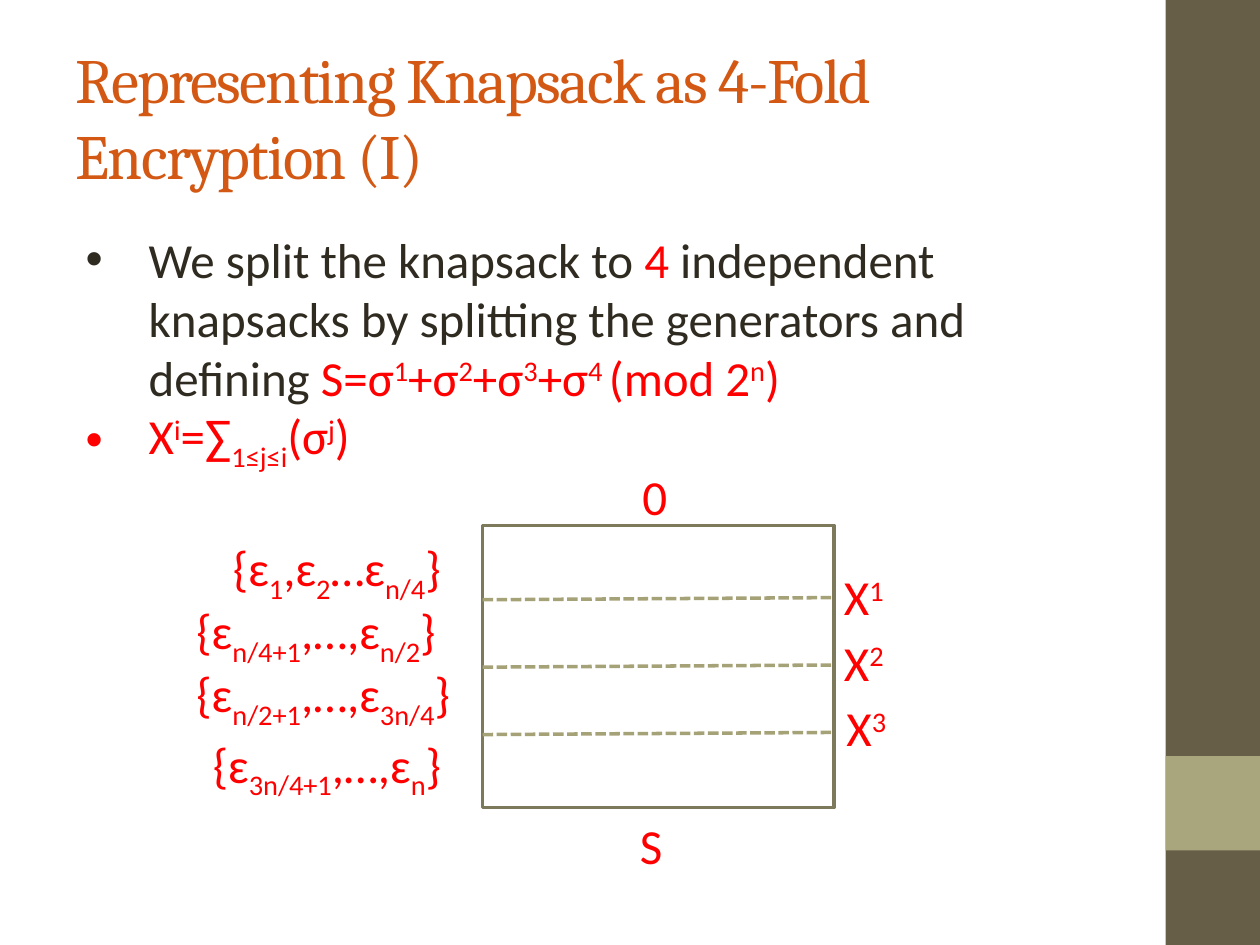
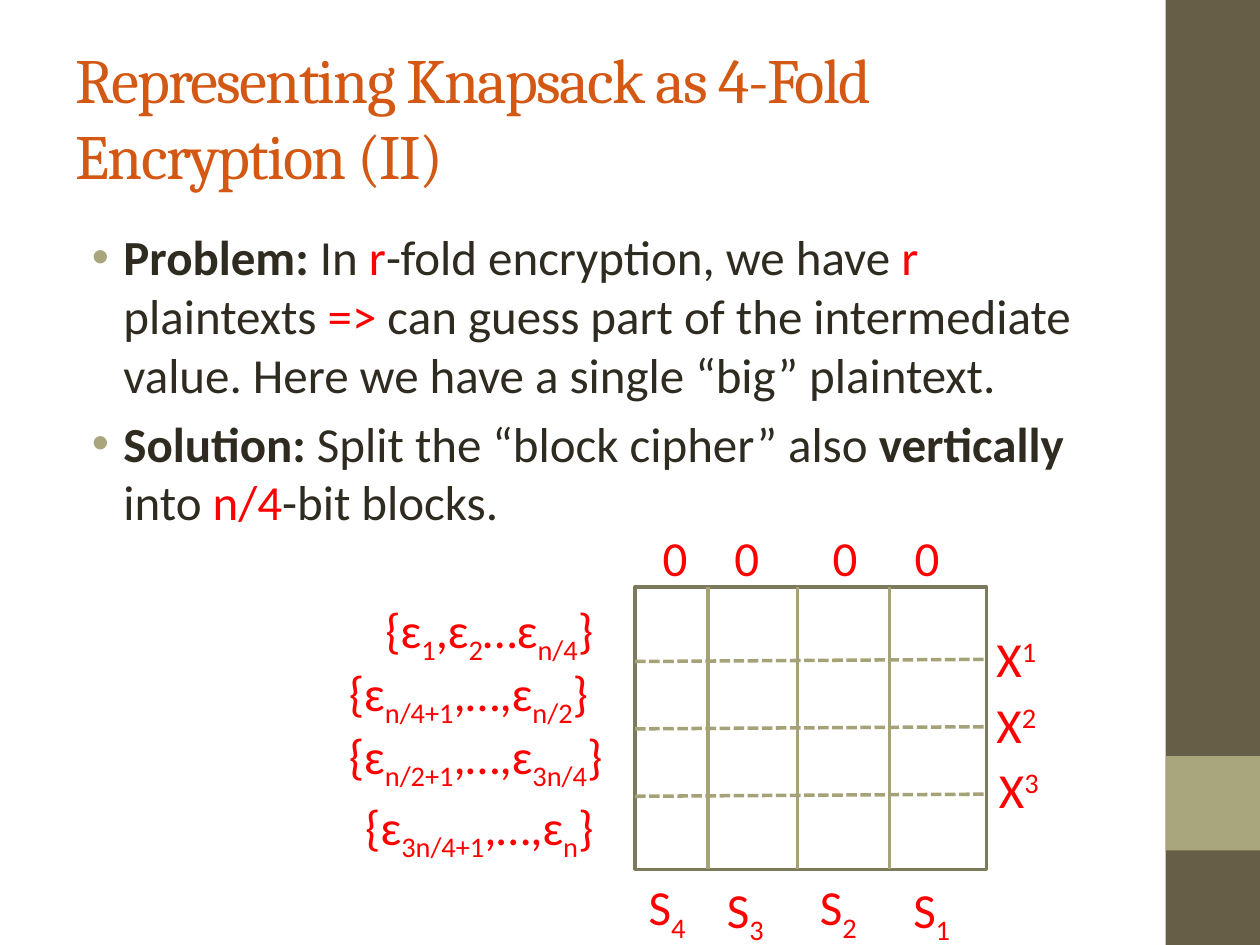
from lxml.etree import SubElement
from pptx import Presentation
from pptx.dml.color import RGBColor
from pptx.enum.dml import MSO_LINE
from pptx.enum.shapes import MSO_CONNECTOR, MSO_SHAPE
from pptx.enum.text import MSO_ANCHOR, MSO_AUTO_SIZE, PP_ALIGN
from pptx.oxml.ns import qn
from pptx.util import Inches, Pt

RED, INK, RUST = "FF0000", "2F2B20", "D25814"
DARK, SAGE, EDGE, RULE = "675E47", "A9A57C", "7D7A5C", "A6A278"
WIDE, HIGH = 100, 75
TALL = 5.7
SHIFTS = {"^": "30000", "_": "-25000"}

LEFT = [
    (-20.8, 0.5, 20.8, "{ɛ|_1|,ɛ|_2|…ɛ|_n/4|}"),
    (-23.7, 5.5, 25.1, "{ɛ|_n/4+1|,…,ɛ|_n/2|}"),
    (-23.7, 10.5, 25.1, "{ɛ|_n/2+1|,…,ɛ|_3n/4|}"),
    (-22.4, 16.1, 23.9, "{ɛ|_3n/4+1|,…,ɛ|_n|}"),
]
RIGHT = [(27.7, 2.8, 5.6, "X|^1"), (27.7, 8, 5.6, "X|^2"), (27.9, 13.2, 5.6, "X|^3")]
WHOLE = [(11.7, -5.2, 4.5, "0"), (11.5, 22.5, 4.5, "S")]
SPLIT = [(x, -5.2, 4.5, "0") for x in (1.2, 6.9, 14.7, 21.2)] + [
    (0.1, 22.5, 6.6, "S|_4"),
    (6.3, 22.7, 6.6, "S|_3"),
    (13.7, 22.5, 6.6, "S|_2"),
    (21.1, 22.7, 6.6, "S|_1"),
]


def hue(code):
    return RGBColor.from_string(code)


def grid(*cells):
    return [Inches(cell / 10) for cell in cells]


def write(para, text, size=28, font="Calibri", color=INK, track=None):
    for part in text.split("|"):
        mark = part[0] if part[0] in "!*^_" else ""
        run = para.add_run()
        run.text = part[len(mark):]
        run.font.size = Pt(size)
        run.font.name = font
        run.font.bold = mark == "*"
        run.font.color.rgb = hue(RED if mark and mark in "!^_" else color)
        props = run.font._element
        if mark in SHIFTS:
            props.set("baseline", SHIFTS[mark])
        if track:
            props.set("spc", str(track * 100))


def place(shape, box):
    shape.left, shape.top, shape.width, shape.height = grid(*box)


def band(slide, box, color):
    shape = slide.shapes.add_shape(MSO_SHAPE.RECTANGLE, *grid(*box))
    shape.shadow.inherit = False
    shape.fill.solid()
    shape.fill.fore_color.rgb = hue(color)
    shape.line.fill.background()


def head(slide, box, text):
    title = slide.shapes.title
    place(title, box)
    frame = title.text_frame
    frame.auto_size = MSO_AUTO_SIZE.NONE
    frame.vertical_anchor = MSO_ANCHOR.MIDDLE
    para = frame.paragraphs[0]
    para.alignment = PP_ALIGN.LEFT
    write(para, text, size=36, font="Cambria", color=RUST, track=-1)


def points(slide, box, lines, inset, hang, gap=0, dot=None):
    body = slide.placeholders[1]
    place(body, box)
    frame = body.text_frame
    frame.auto_size = MSO_AUTO_SIZE.NONE
    for i, line in enumerate(lines):
        para = frame.add_paragraph() if i else frame.paragraphs[0]
        props = para._p.get_or_add_pPr()
        props.set("marL", str(Inches(inset)))
        props.set("indent", str(-Inches(hang)))
        if dot:
            SubElement(SubElement(props, qn("a:buClr")), qn("a:srgbClr"), val=dot)
        SubElement(props, qn("a:buFont"), typeface="Arial")
        SubElement(props, qn("a:buChar"), char="•")
        para.space_before = Pt(gap if i else 0)
        write(para, line)


def rule(group, start, end, dash=None):
    line = group.shapes.add_connector(MSO_CONNECTOR.STRAIGHT, *grid(*start, *end))
    line.line.color.rgb = hue(RULE)
    line.line.width = Pt(2)
    if dash:
        line.line.dash_style = dash
    SubElement(line._element.spPr, qn("a:effectLst"))


def cipher(slide, box, labels, cuts=()):
    left, top, width, height = box
    group = slide.shapes.add_group_shape()
    frame = group.shapes.add_shape(MSO_SHAPE.RECTANGLE, *grid(*box))
    frame.shadow.inherit = False
    frame.fill.background()
    frame.line.color.rgb = hue(EDGE)
    frame.line.width = Pt(2)
    for row in range(3):
        y = top + 5.9 + 5.35 * row
        rule(group, (left, y), (left + width - 0.1, y - 0.17), MSO_LINE.SQUARE_DOT)
    for cut in cuts:
        rule(group, (left + cut, top), (left + cut, top + height))
    for x, y, span, text in LEFT + RIGHT + labels:
        note = group.shapes.add_textbox(*grid(left + x, top + y, span, TALL))
        note.text_frame.word_wrap = True
        write(note.text_frame.paragraphs[0], text, color=RED)


def page(deck, title):
    slide = deck.slides.add_slide(deck.slide_layouts[1])
    band(slide, (WIDE - 7.5, 0, 7.5, HIGH), DARK)
    band(slide, (WIDE - 7.5, HIGH * 0.8, 7.5, HIGH * 0.1), SAGE)
    head(slide, (5, 3, 83.3, 12.5), title)
    return slide


def main():
    deck = Presentation()
    deck.slide_width, deck.slide_height = grid(WIDE, HIGH)

    first = page(deck, "Representing Knapsack as 4-Fold Encryption (I)")
    points(first, (5.8, 17.7, 83.3, 24.4), [
        "We split the knapsack to |!4| independent knapsacks by splitting the "
        "generators and defining |!S=σ|^1|!+σ|^2|!+σ|^3|!+σ|^4 |!(mod 2|^n|!)",
        "!X|^i|!=∑|_1≤j≤i|!(σ|^j|!)",
    ], inset=0.5, hang=0.5)
    cipher(first, (38.3, 41.7, 27.9, 22.4), WHOLE)

    second = page(deck, "Representing Knapsack as 4-Fold Encryption (II)")
    points(second, (5, 17.5, 83.3, 30), [
        "*Problem: |In |!r|-fold encryption, we have |!r| plaintexts |!=>| can guess "
        "part of the intermediate value. Here we have a single “big” plaintext.",
        "*Solution: |Split the “block cipher” also |*vertically| into |!n/4|-bit blocks.",
    ], inset=0.38, hang=0.25, gap=5.6, dot=SAGE)
    cipher(second, (50.4, 46.6, 27.9, 22.4), SPLIT, cuts=(5.8, 12.9, 20.2))

    deck.save("out.pptx")


if __name__ == "__main__":
    main()
